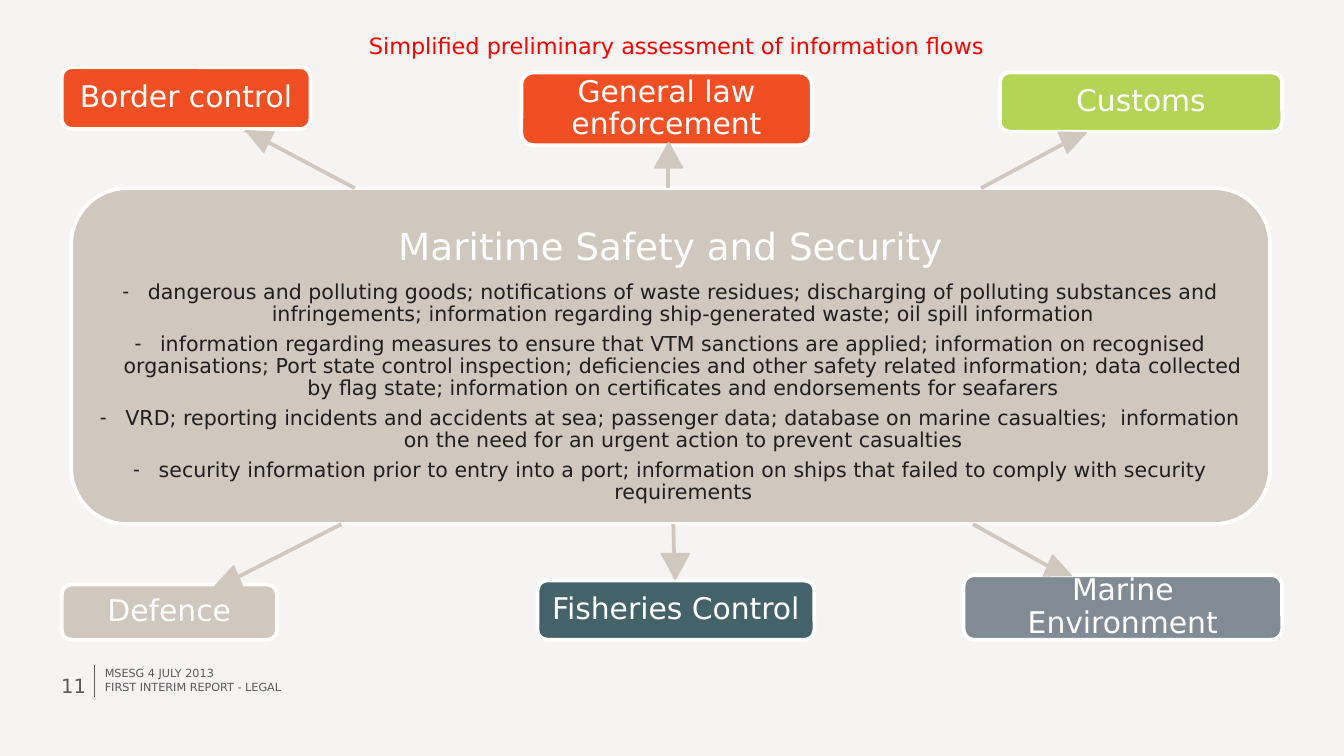
from lxml import etree
from pptx import Presentation
from pptx.dml.color import RGBColor
from pptx.enum.shapes import MSO_CONNECTOR as Connector, MSO_SHAPE as Shape
from pptx.enum.text import MSO_ANCHOR as Anchor, MSO_AUTO_SIZE as AutoSize, PP_ALIGN as Align
from pptx.oxml.ns import qn
from pptx.util import Inches, Pt

SAND, WHITE, GREY, ORANGE = "D0C7BD", "FFFFFF", "58595B", "F04E23"

# label, fill, box, arrow start, arrow end, arrowhead left and top, head width, rotation
SECTORS = [
    ("General law enforcement", ORANGE, (3.88, 0.54, 2.16, 0.54),
     (4.97, 1.4), (4.97, 1.08), (4.87, 1.06), 0.21, 0),
    ("Customs", "B3D455", (7.44, 0.54, 2.1, 0.44),
     (7.3, 1.4), (8.08, 0.98), (7.91, 0.93), 0.17, 66.5),
    ("Marine Environment", "818B96", (7.17, 4.28, 2.37, 0.48),
     (7.24, 3.9), (7.92, 4.28), (7.8, 4.15), 0.17, 113.4),
    ("Fisheries Control", "44626A", (4, 4.32, 2.06, 0.44),
     (5.01, 3.9), (5.02, 4.32), (4.92, 4.12), 0.21, 180),
    ("Defence", SAND, (0.46, 4.35, 1.6, 0.41),
     (2.54, 3.9), (1.66, 4.35), (1.6, 4.23), 0.17, 246.4),
    ("Border control", ORANGE, (0.46, 0.5, 1.85, 0.46),
     (2.64, 1.4), (1.81, 0.96), (1.83, 0.92), 0.17, 296.7),
]

FLOWS = [
    "dangerous and polluting goods; notifications of waste residues; discharging of polluting "
    "substances and infringements; information regarding ship-generated waste; oil spill information",
    "information regarding measures to ensure that VTM sanctions are applied; information on "
    "recognised organisations; Port state control inspection; deficiencies and other safety related "
    "information; data collected by flag state; information on certificates and endorsements for "
    "seafarers",
    "VRD; reporting incidents and accidents at sea; passenger data; database on marine casualties;  "
    "information on the need for an urgent action to prevent casualties",
    "security information prior to entry into a port; information on ships that failed to comply "
    "with security requirements",
]


def color(value):
    return RGBColor.from_string(value)


def set_bullet(paragraph, char=None, indent=0.0):
    """Give the paragraph a hanging bullet, or none without a char."""
    props = paragraph._p.get_or_add_pPr()
    props.set("marL", str(Inches(indent)))
    props.set("indent", str(-Inches(indent)))
    if char:
        etree.SubElement(props, qn("a:buChar")).set("char", char)
    else:
        etree.SubElement(props, qn("a:buNone"))


class FlowSlide:
    font = "DejaVu Sans"

    def __init__(self, slide, background):
        self.slide = slide
        fill = slide.background.fill
        fill.solid()
        fill.fore_color.rgb = color(background)

    def place(self, shape, box):
        shape.left, shape.top, shape.width, shape.height = map(Inches, box)

    def set_frame(self, frame, margin_x, margin_y, anchor=Anchor.MIDDLE):
        frame.word_wrap = True
        frame.auto_size = AutoSize.NONE
        frame.vertical_anchor = anchor
        frame.margin_left = frame.margin_right = Inches(margin_x)
        frame.margin_top = frame.margin_bottom = Inches(margin_y)

    def style(self, paragraph, size, ink, align=Align.CENTER, spacing=0.9, after=0):
        paragraph.alignment = align
        paragraph.line_spacing = spacing
        paragraph.space_before = Pt(0)
        paragraph.space_after = Pt(after)
        for run in paragraph.runs:
            run.font.name = self.font
            run.font.size = Pt(size)
            run.font.color.rgb = color(ink)

    def title(self, text, box):
        title = self.slide.shapes.title
        self.place(title, box)
        self.set_frame(title.text_frame, 0.05, 0.05)
        title.text_frame.text = text
        self.style(title.text_frame.paragraphs[0], 12, "FF0000", spacing=1.0)

    def shape(self, kind, box, fill, line=WHITE, line_width=2):
        shape = self.slide.shapes.add_shape(kind, *map(Inches, box))
        shape.shadow.inherit = False
        shape.fill.solid()
        shape.fill.fore_color.rgb = color(fill)
        shape.line.color.rgb = color(line)
        shape.line.width = Pt(line_width)
        return shape

    def sector(self, label, fill, box):
        frame = self.shape(Shape.ROUNDED_RECTANGLE, box, fill).text_frame
        self.set_frame(frame, 0.07, 0.03)
        frame.text = label
        self.style(frame.paragraphs[0], 16, WHITE)

    def line(self, start, end, ink, width):
        line = self.slide.shapes.add_connector(
            Connector.STRAIGHT, *map(Inches, start + end))
        line.line.color.rgb = color(ink)
        line.line.width = Pt(width)
        etree.SubElement(line._element.spPr, qn("a:effectLst"))

    def arrowhead(self, corner, width, rotation):
        head = self.shape(Shape.ISOSCELES_TRIANGLE, corner + (width, 0.19), SAND, SAND, 0.75)
        head.rotation = rotation

    def hub_text(self, heading, items, box):
        """Fill the body placeholder and bring it in front of the hub."""
        body = self.slide.placeholders[1]
        self.place(body, box)
        frame = body.text_frame
        self.set_frame(frame, 0.06, 0, Anchor.TOP)
        frame.text = "\n".join([heading] + items)
        first, *rest = frame.paragraphs
        set_bullet(first)
        self.style(first, 20, WHITE, after=7)
        for paragraph in rest:
            set_bullet(paragraph, "-", 0.19)
            self.style(paragraph, 11, "1F1F1F", after=4)
        self.slide.shapes._spTree.append(body._element)

    def footer(self, text, box, size=6, align=Align.LEFT):
        frame = self.slide.shapes.add_textbox(*map(Inches, box)).text_frame
        self.set_frame(frame, 0, 0)
        frame.text = text
        self.style(frame.paragraphs[0], size, GREY, align, Pt(6))


def main():
    deck = Presentation()
    deck.slide_width, deck.slide_height = Inches(10), Inches(10 * 9 / 16)
    page = FlowSlide(deck.slides.add_slide(deck.slide_layouts[1]), "F6F4F2")

    page.title("Simplified preliminary assessment of information flows", (2.62, 0.19, 4.83, 0.3))
    page.shape(Shape.ROUNDED_RECTANGLE, (0.53, 1.4, 8.92, 2.5), SAND)
    page.hub_text("Maritime Safety and Security", FLOWS, (0.65, 1.7, 8.68, 2.08))

    for label, fill, box, start, end, corner, width, rotation in SECTORS:
        page.line(start, end, SAND, 2)
        page.sector(label, fill, box)
        page.arrowhead(corner, width, rotation)

    page.line((0.7, 4.95), (0.7, 5.19), GREY, 0.25)
    page.footer("11", (0.19, 4.94, 0.45, 0.42), 10.5, Align.RIGHT)
    page.footer("MSESG 4 JULY 2013", (0.78, 4.98, 2.14, 0.07))
    page.footer("FIRST INTERIM REPORT - LEGAL", (0.78, 5.08, 2.14, 0.08))
    deck.save("out.pptx")


if __name__ == "__main__":
    main()
